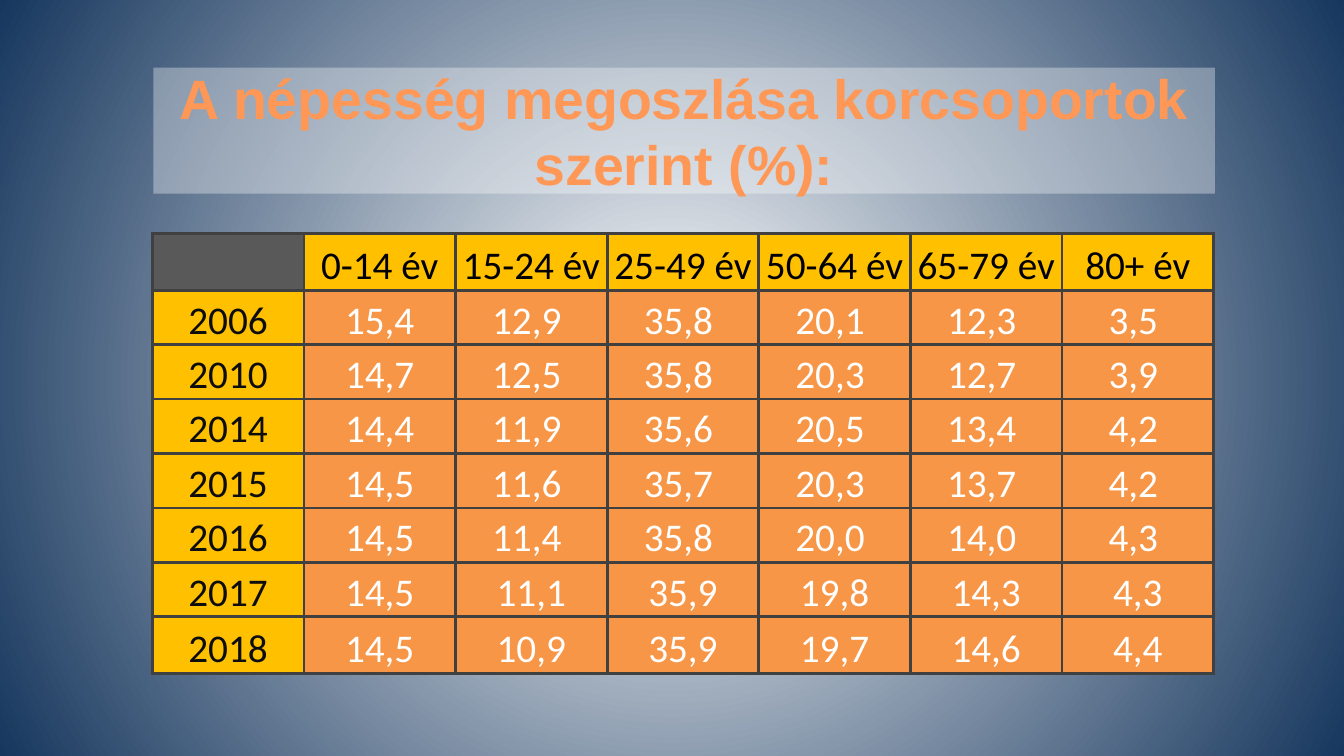
from lxml import etree
from pptx import Presentation
from pptx.dml.color import RGBColor
from pptx.enum.text import MSO_ANCHOR, MSO_AUTO_SIZE, PP_ALIGN
from pptx.oxml import parse_xml
from pptx.oxml.ns import qn
from pptx.util import Inches, Pt

CENTER = PP_ALIGN.CENTER
MIDDLE, BOTTOM = MSO_ANCHOR.MIDDLE, MSO_ANCHOR.BOTTOM
NO_FIT = MSO_AUTO_SIZE.NONE
NS = 'xmlns:a="http://schemas.openxmlformats.org/drawingml/2006/main"'

GOLD, ORANGE, GREY, BORDER = "FFC000", "F79646", "595959", "404040"
TITLE = "A népesség megoszlása korcsoportok szerint (%):"
TITLE_STOPS = [(0, "9D4700"), (78, "FF9856"), (100, "FFF5F1")]
BACKGROUND_STOPS = [(0, "FFFFFF"), (100, "17375E")]
LINEAR = '<a:lin ang="5400000" scaled="0"/>'
CIRCLE = ('<a:path path="circle"><a:fillToRect l="50000" t="50000" '
          'r="50000" b="50000"/></a:path>')

AGE_GROUPS = ["0-14 év", "15-24 év", "25-49 év", "50-64 év", "65-79 év", "80+ év"]
SHARES = {
    "2006": ["15,4", "12,9", "35,8", "20,1", "12,3", "3,5"],
    "2010": ["14,7", "12,5", "35,8", "20,3", "12,7", "3,9"],
    "2014": ["14,4", "11,9", "35,6", "20,5", "13,4", "4,2"],
    "2015": ["14,5", "11,6", "35,7", "20,3", "13,7", "4,2"],
    "2016": ["14,5", "11,4", "35,8", "20,0", "14,0", "4,3"],
    "2017": ["14,5", "11,1", "35,9", "19,8", "14,3", "4,3"],
    "2018": ["14,5", "10,9", "35,9", "19,7", "14,6", "4,4"],
}
LAST_SHIFTED_YEAR = "2016"


def rgb(value):
    """Return the colour for a hex string."""
    return RGBColor.from_string(value)


def gradient(stops, direction):
    """Return a gradient fill element."""
    marks = "".join(f'<a:gs pos="{pos * 1000}"><a:srgbClr val="{color}"/></a:gs>'
                    for pos, color in stops)
    return parse_xml(f'<a:gradFill {NS} rotWithShape="1"><a:gsLst>{marks}</a:gsLst>'
                     f'{direction}</a:gradFill>')


def write(tf, text, size=28, font="Calibri", color="000000", bold=False):
    """Write one centred run in a text frame and return it."""
    p = tf.paragraphs[0]
    p.alignment = CENTER
    r = p.add_run()
    r.text = text
    r.font.size, r.font.name, r.font.bold = Pt(size), font, bold
    r.font.color.rgb = rgb(color)
    return r


def set_background(s):
    """Give the slide a circular gradient."""
    fill = s.background.fill
    fill.solid()
    bg_pr = s.element.cSld.find(qn("p:bg")).find(qn("p:bgPr"))
    bg_pr.replace(bg_pr.find(qn("a:solidFill")), gradient(BACKGROUND_STOPS, CIRCLE))


def add_title(s):
    """Format the title placeholder with a translucent panel."""
    sp = s.shapes.title
    sp.left, sp.top = Inches(1.52), Inches(0.67)
    sp.width, sp.height = Inches(10.53), Inches(1.25)
    sp.fill.solid()
    sp.fill.fore_color.rgb = rgb("FFFFFF")
    panel = sp.element.spPr.find(qn("a:solidFill"))[0]
    etree.SubElement(panel, qn("a:alpha")).set("val", "34000")
    tf = sp.text_frame
    tf.auto_size, tf.word_wrap, tf.vertical_anchor = NO_FIT, True, MIDDLE
    r = write(tf, TITLE, size=39.6, font="Arial", bold=True)
    r_pr = r.font.fill._xPr
    r_pr.replace(r_pr.find(qn("a:solidFill")), gradient(TITLE_STOPS, LINEAR))


def set_borders(cell, color, width):
    """Draw all four borders of a cell."""
    tc_pr = cell._tc.get_or_add_tcPr()
    for i, side in enumerate("LRTB"):
        tc_pr.insert(i, parse_xml(
            f'<a:ln{side} {NS} w="{Pt(width)}"><a:solidFill><a:srgbClr val="{color}"/>'
            f'</a:solidFill></a:ln{side}>'))


def format_cell(cell, text, fill, color, right=0.01):
    """Fill, frame and write one table cell."""
    cell.fill.solid()
    cell.fill.fore_color.rgb = rgb(fill)
    set_borders(cell, BORDER, 2.25)
    cell.vertical_anchor = BOTTOM
    cell.margin_left = cell.margin_top = Inches(0.01)
    cell.margin_right, cell.margin_bottom = Inches(right), 0
    if text:
        write(cell.text_frame, text, color=color)


def add_share_table(s):
    """Add the table of age group shares by year."""
    rows = [["", *AGE_GROUPS]] + [[year, *values] for year, values in SHARES.items()]
    table = s.shapes.add_table(len(rows), len(rows[0]), Inches(1.51), Inches(2.32),
                               Inches(10.53), Inches(4.35)).table
    table.first_row = table.horz_banding = False
    for i, row in enumerate(rows):
        table.rows[i].height = Inches(0.56 if i in (0, len(rows) - 1) else 0.54)
        for j, text in enumerate(row):
            cell = table.cell(i, j)
            if i == 0:
                format_cell(cell, text, GOLD if j else GREY, "000000")
            elif j == 0:
                format_cell(cell, text, GOLD, "0D0D0D")
            else:
                shifted = j > 1 and row[0] <= LAST_SHIFTED_YEAR
                format_cell(cell, text, ORANGE, "FFFFFF", right=0.1 if shifted else 0.01)


def main():
    """Build and save the slide."""
    prs = Presentation()
    prs.slide_width, prs.slide_height = Inches(13.33), Inches(7.5)
    s = prs.slides.add_slide(prs.slide_layouts[5])
    set_background(s)
    add_title(s)
    add_share_table(s)
    prs.save("out.pptx")


if __name__ == "__main__":
    main()
